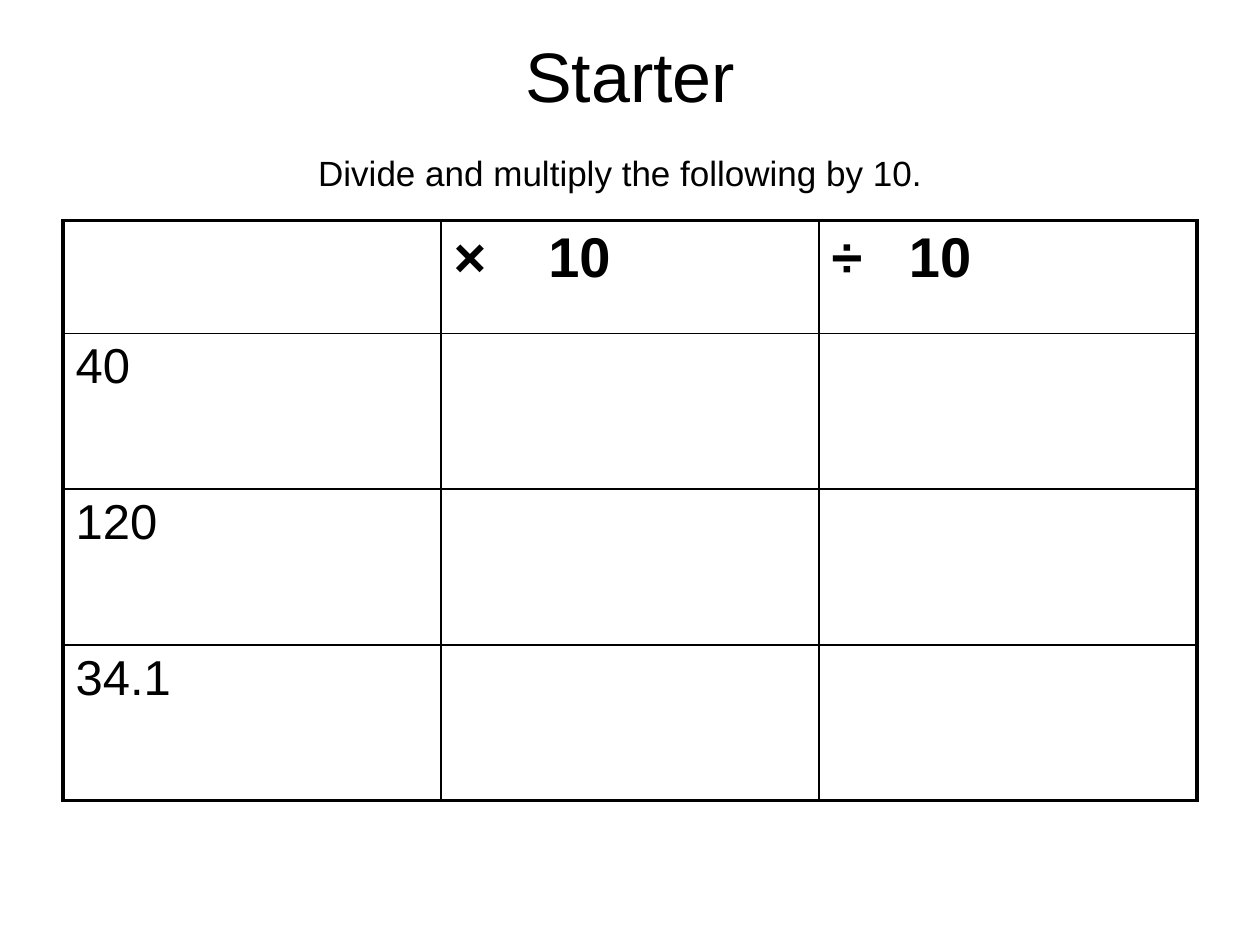
"""Build a starter slide with a table for multiplying and dividing by 10."""
from dataclasses import dataclass

from lxml.etree import SubElement
from pptx import Presentation
from pptx.dml.color import RGBColor
from pptx.enum.text import MSO_ANCHOR, MSO_AUTO_SIZE, PP_ALIGN
from pptx.oxml.ns import qn
from pptx.table import Table, _Cell as Cell
from pptx.text.text import _Paragraph as Paragraph, _Run as Run
from pptx.util import Cm, Length, Pt

BLACK = RGBColor(0x00, 0x00, 0x00)
WHITE = RGBColor(0xFF, 0xFF, 0xFF)
FONT = "Arial"
OUTER, INNER = Pt(2.25), Pt(1)
COLUMN_WIDTH = Cm(7.62)
HEADER_HEIGHT, ANSWER_HEIGHT = Cm(2.27), Cm(3.14)


@dataclass(frozen=True)
class Entry:
    """Text of one table cell."""
    text: str
    size: int = 28
    bold: bool = False
    tab: Length | None = None


GRID = (
    (None, Entry("×\t10", 32, True, Cm(1.91)), Entry("÷\t10", 32, True, Cm(1.56))),
    (Entry("40"), None, None),
    (Entry("120"), None, None),
    (Entry("34.1"), None, None),
)


def add_text(paragraph: Paragraph, text: str, size: int, bold: bool = False) -> Run:
    """Append one formatted run."""
    run = paragraph.add_run()
    run.text = text
    run.font.name, run.font.size, run.font.bold = FONT, Pt(size), bold
    run.font.color.rgb = BLACK
    return run


def write_entry(cell: Cell, entry: Entry) -> None:
    """Write an entry with proportional spacing and an optional tab stop."""
    paragraph = cell.text_frame.paragraphs[0]
    add_text(paragraph, entry.text, entry.size, entry.bold)
    properties = paragraph._p.get_or_add_pPr()
    spacing = SubElement(properties, qn("a:spcBef"))
    SubElement(spacing, qn("a:spcPct"), val="20000")
    if entry.tab is not None:
        stops = SubElement(properties, qn("a:tabLst"))
        SubElement(stops, qn("a:tab"), pos=str(int(entry.tab)), algn="l")


def draw_borders(cell: Cell, row: int, column: int) -> None:
    """Rule a cell, heavier along the edge of the table."""
    properties = cell._tc.get_or_add_tcPr()
    edges = {
        "a:lnL": column == 0,
        "a:lnR": column == len(GRID[0]) - 1,
        "a:lnT": row == 0,
        "a:lnB": row == len(GRID) - 1,
    }
    for side, on_edge in edges.items():
        line = SubElement(properties, qn(side), w=str(int(OUTER if on_edge else INNER)))
        fill = SubElement(line, qn("a:solidFill"))
        SubElement(fill, qn("a:srgbClr"), val=str(BLACK))


def fill_table(table: Table) -> None:
    """Size, rule and write the whole table."""
    table.first_row = table.horz_banding = False
    for column in table.columns:
        column.width = COLUMN_WIDTH
    for row, entries in enumerate(GRID):
        table.rows[row].height = ANSWER_HEIGHT if row else HEADER_HEIGHT
        for column, entry in enumerate(entries):
            cell = table.cell(row, column)
            draw_borders(cell, row, column)
            cell.fill.solid()
            cell.fill.fore_color.rgb = WHITE
            if entry:
                write_entry(cell, entry)


def main() -> None:
    """Create and save the slide."""
    deck = Presentation()
    deck.slide_width, deck.slide_height = Cm(25.4), Cm(19.05)
    slide = deck.slides.add_slide(deck.slide_layouts[5])

    title = slide.shapes.title
    title.left, title.top = Cm(1.27), Cm(0.76)
    title.width, title.height = 3 * COLUMN_WIDTH, Cm(3.18)
    frame = title.text_frame
    frame.auto_size = MSO_AUTO_SIZE.NONE
    frame.vertical_anchor = MSO_ANCHOR.MIDDLE
    heading = frame.paragraphs[0]
    heading.alignment = PP_ALIGN.CENTER
    add_text(heading, "Starter", 40)
    heading.add_line_break()
    add_text(heading, "Divide and multiply the following by 10.", 20)
    trailing_space = add_text(heading, " ", 40)
    trailing_space._r.get_or_add_rPr().set("spc", "667")

    exercise = slide.shapes.add_table(
        len(GRID), len(GRID[0]), Cm(1.27), Cm(4.45),
        3 * COLUMN_WIDTH, HEADER_HEIGHT + 3 * ANSWER_HEIGHT,
    )
    fill_table(exercise.table)
    deck.save("out.pptx")


if __name__ == "__main__":
    main()
